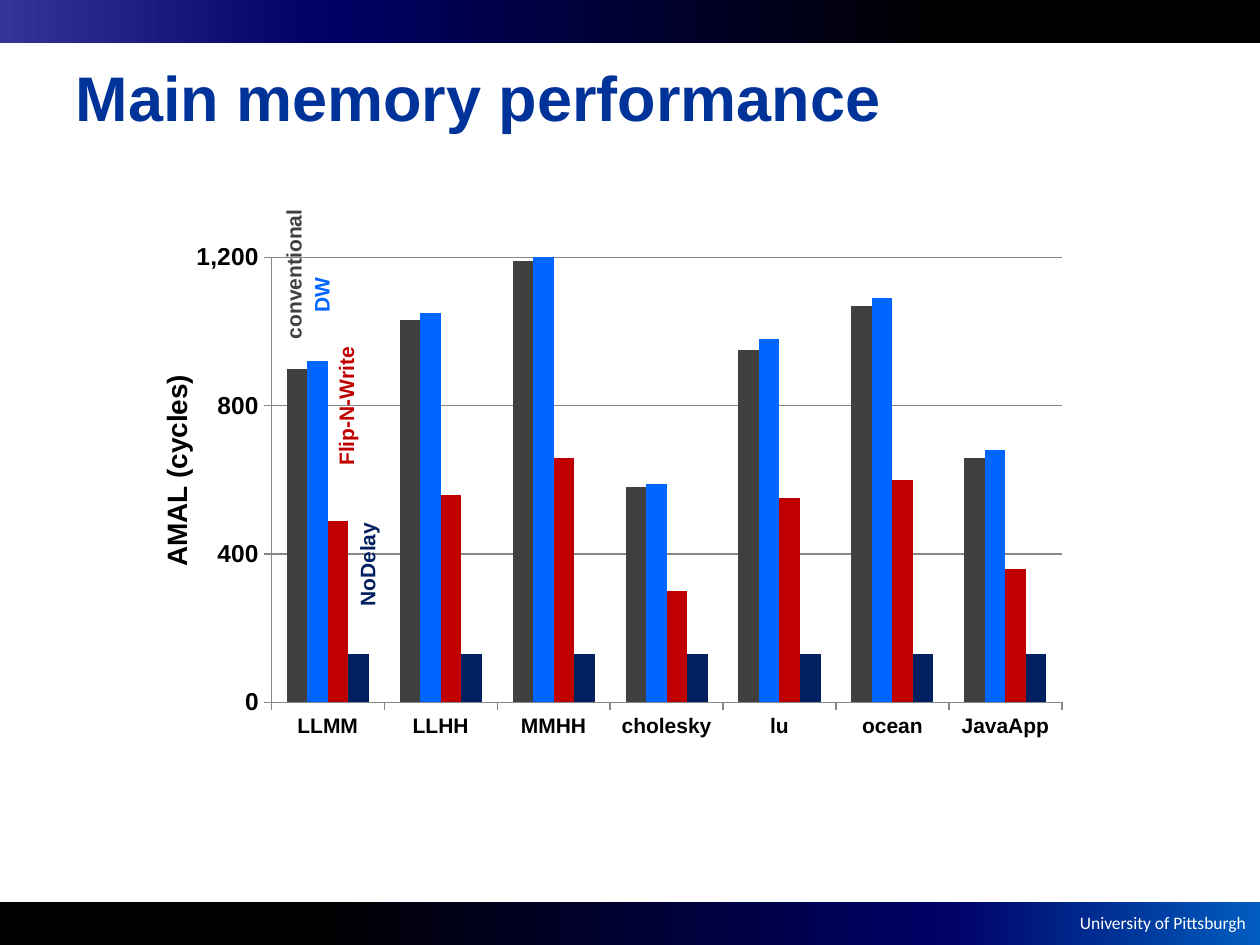
from dataclasses import dataclass
from lxml.etree import SubElement as Sub
from pptx import Presentation
from pptx.chart.data import CategoryChartData as ChartData
from pptx.dml.color import RGBColor as Rgb
from pptx.enum.chart import XL_CHART_TYPE as Kind, XL_TICK_MARK as Tick
from pptx.enum.shapes import MSO_SHAPE as Form
from pptx.enum.text import MSO_ANCHOR as Anchor, MSO_AUTO_SIZE as Fit, PP_ALIGN as Align
from pptx.oxml.ns import qn
from pptx.util import Pt


@dataclass(frozen=True)
class Theme:
    font: str = "Arial"
    foot: str = "Calibri"
    title: str = "003399"
    ink: str = "000000"
    white: str = "FFFFFF"
    rule: str = "878787"
    bars: tuple = ("404040", "0066FF", "C00000", "002060")
    top: tuple = ("333399", "000066", "000000", "000000")
    base: tuple = ("000000", "000000", "000066", "005CBF")
    stops: tuple = (0, 25, 75, 100)
    head: int = 36
    axis: int = 16
    tick: int = 14
    label: int = 12
    small: int = 10


THEME = Theme()
WIDE, HIGH = 720, 540
BAND = 24.5
CATS = ["LLMM", "LLHH", "MMHH", "cholesky", "lu", "ocean", "JavaApp"]
ROWS = [
    [900, 1030, 1190, 580, 950, 1070, 660],
    [920, 1050, 1210, 590, 980, 1090, 680],
    [490, 560, 660, 300, 550, 600, 360],
    [130] * 7,
]
NAMES = [
    ("conventional", 64, 23.7, 89.3),
    ("DW", 80, 36, 34.6),
    ("Flip-N-Write", 94, 99.3, 82.8),
    ("NoDelay", 106.2, 190, 62.6),
]


def style(font, size, color, name=THEME.font, bold=True):
    font.name, font.size, font.bold = name, Pt(size), bold
    font.color.rgb = Rgb.from_string(color)


def write(slide, box, text, size, color, name=THEME.font, bold=True, align=Align.LEFT):
    shape = slide.shapes.add_textbox(*map(Pt, box))
    frame = shape.text_frame
    frame.word_wrap = False
    frame.auto_size = Fit.SHAPE_TO_FIT_TEXT
    para = frame.paragraphs[0]
    para.alignment = align
    run = para.add_run()
    run.text = text
    style(run.font, size, color, name, bold)
    return shape


def add_band(slide, box, colors):
    shape = slide.shapes.add_shape(Form.RECTANGLE, *map(Pt, box))
    shape.shadow.inherit = False
    shape.line.fill.background()
    shape.fill.gradient()
    shape.fill.gradient_angle = 0
    stops = next(shape.element.iter(qn("a:gsLst")))
    stops.clear()
    for pos, color in zip(THEME.stops, colors):
        stop = Sub(stops, qn("a:gs"), pos=str(pos * 1000))
        Sub(stop, qn("a:srgbClr"), val=color)


def add_foot(slide, box):
    left, top, width, height = box
    add_band(slide, box, THEME.base)
    write(slide, (left + width - 120.5, top + 2, 119.5, 19.4), "University of Pittsburgh",
          THEME.small, THEME.white, THEME.foot, False, Align.RIGHT)


def add_title(slide, box):
    title = slide.shapes.title
    title.left, title.top, title.width, title.height = map(Pt, box)
    frame = title.text_frame
    frame.vertical_anchor = Anchor.MIDDLE
    para = frame.paragraphs[0]
    para.alignment = Align.LEFT
    run = para.add_run()
    run.text = "Main memory performance"
    style(run.font, THEME.head, THEME.title)


def set_plot(chart, **parts):
    area = chart.element.chart.plotArea
    for old in area.findall(qn("c:layout")):
        area.remove(old)
    layout = Sub(area, qn("c:layout"))
    area.insert(0, layout)
    manual = Sub(layout, qn("c:manualLayout"))
    modes = dict(layoutTarget="inner", xMode="edge", yMode="edge")
    for key, value in {**modes, **parts}.items():
        Sub(manual, qn(f"c:{key}"), val=str(value))


def set_axes(chart):
    rule = Rgb.from_string(THEME.rule)
    cat, val = chart.category_axis, chart.value_axis
    for axis, size in ((cat, THEME.label), (val, THEME.tick)):
        axis.major_tick_mark = Tick.OUTSIDE
        axis.minor_tick_mark = Tick.NONE
        axis.format.line.color.rgb = rule
        style(axis.tick_labels.font, size, THEME.ink)
    val.minimum_scale, val.maximum_scale, val.major_unit = 0, 1200, 400
    val.tick_labels.number_format = "#,##0"
    val.tick_labels.number_format_is_linked = False
    val.has_major_gridlines = True
    val.major_gridlines.format.line.color.rgb = rule


def add_bars(slide, box):
    data = ChartData()
    data.categories = CATS
    for num, row in enumerate(ROWS, 1):
        data.add_series(f"Series {num}", row)
    chart = slide.shapes.add_chart(Kind.COLUMN_CLUSTERED, *map(Pt, box), data).chart
    chart.has_legend = chart.has_title = False
    style(chart.font, THEME.tick, THEME.ink)
    set_plot(chart, x=0.1, y=0.05, w=0.88, h=0.87)
    set_axes(chart)
    plot = chart.plots[0]
    plot.gap_width, plot.overlap, plot.vary_by_categories = 150, 0, False
    for series, color in zip(plot.series, THEME.bars):
        series.format.fill.solid()
        series.format.fill.fore_color.rgb = Rgb.from_string(color)


def add_names(slide, box):
    def turn(text, mid_x, mid_y, width, height, size, color):
        place = (box[0] + mid_x - width / 2, box[1] + mid_y - height / 2, width, height)
        write(slide, place, text, size, color).rotation = 270

    turn("AMAL (cycles)", -3, 135.7, 125.3, 26.6, THEME.axis, THEME.ink)
    for (text, mid_x, mid_y, width), color in zip(NAMES, THEME.bars):
        turn(text, mid_x, mid_y, width, 21.8, THEME.label, color)


def main():
    deck = Presentation()
    deck.slide_width, deck.slide_height = Pt(WIDE), Pt(HIGH)
    slide = deck.slides.add_slide(deck.slide_layouts[5])
    graph = (103.7, 132.5, 513.4, 292.3)
    add_foot(slide, (0, HIGH - BAND, WIDE, BAND))
    add_band(slide, (0, 0, WIDE, BAND), THEME.top)
    add_title(slide, (36, 10, WIDE - 72, 90))
    add_bars(slide, graph)
    add_names(slide, graph)
    deck.save("out.pptx")


if __name__ == "__main__":
    main()
